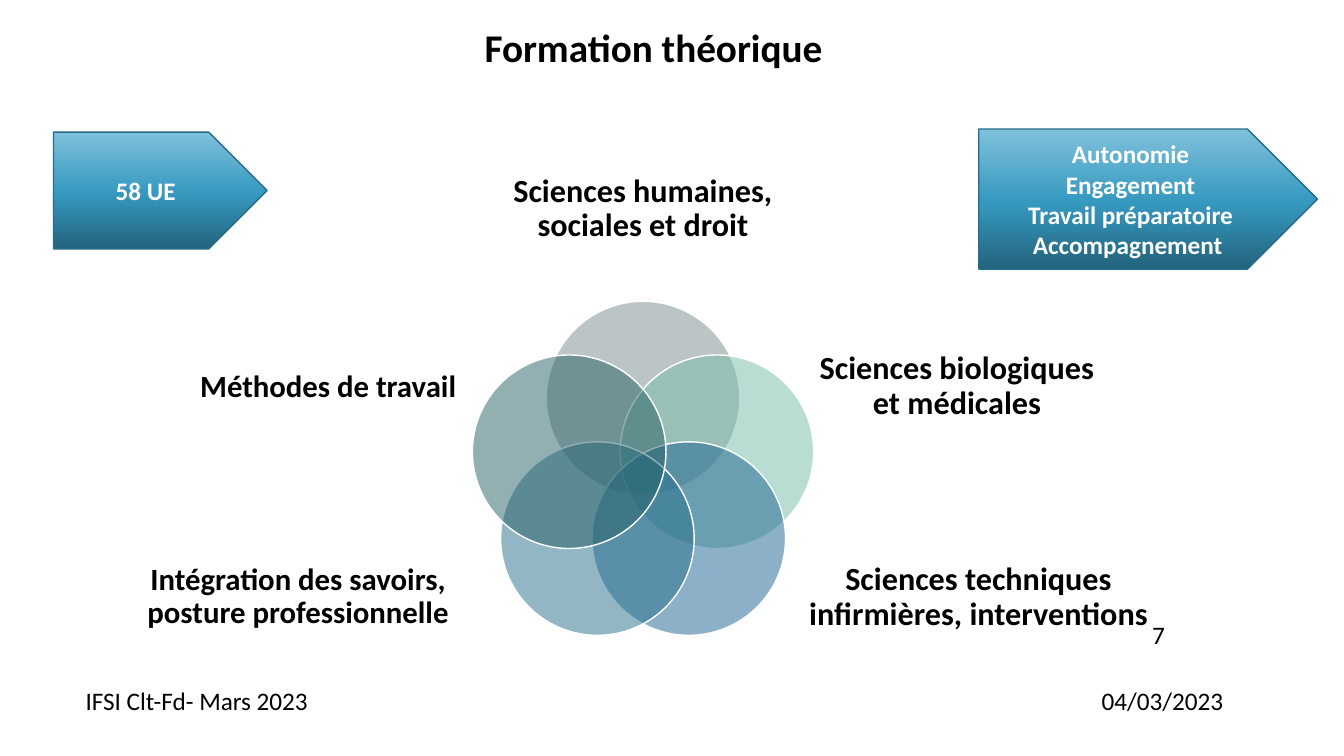
import math
from copy import deepcopy
from lxml import etree
from pptx import Presentation, util as u
from pptx.dml.color import RGBColor
from pptx.enum import shapes, text
from pptx.oxml import ns

COLORS = {
    "ink": "000000", "white": "FFFFFF", "plate_line": "266D8A",
    "grey": "7A8C8E", "green": "75BDA7", "blue": "1D6294",
    "teal": "276F8B", "pine": "266066",
    "deep": "23637D", "mid": "3699C0", "light": "7FC1DB",
}
GRADIENT = [(0, "deep"), (0.48, "mid"), (1, "light")]
FONT = "Calibri"

TITLE = ("Formation théorique", (16.87, 3.07, 63.5, 12.5))
PETALS = [
    ("Sciences humaines, sociales et droit", "grey", 23, (36.98, 20.53, 21.75, 14.27)),
    ("Sciences biologiques et médicales", "green", 23, (60.98, 41.47, 20.48, 19.33)),
    ("Sciences techniques infirmières, interventions", "blue", 23, (58.95, 67.07, 27.75, 23.87)),
    ("Intégration des savoirs, posture professionnelle", "teal", 22, (8.03, 67.33, 28.28, 23.33)),
    ("Méthodes de travail", "pine", 22, (14.85, 41.6, 19.13, 19.33)),
]
PLATES = [
    ("58 UE", (3.98, 17.47, 15.9, 15.47)),
    ("Autonomie\nEngagement\nTravail préparatoire\nAccompagnement ", (72.83, 17.07, 25.2, 18.53)),
]
FOOTERS = [
    ("04/03/2023", (81.23, 90, 13.13, 5.33)),
    ("7", (84.98, 81.33, 9.38, 9.73)),
    ("IFSI Clt-Fd- Mars 2023", (5.63, 90, 61.88, 5.33)),
]
RING_X, RING_Y, RING_R, DIAMETER = 47.85, 62.93, 5.78, 14.4

prs = Presentation()
prs.slide_width, prs.slide_height = u.Inches(13.33), u.Inches(7.5)
W, H = prs.slide_width, prs.slide_height
s = prs.slides.add_slide(prs.slide_layouts[6])


def rgb(name):
    return RGBColor.from_string(COLORS[name])


def place(box):
    return [int(share * side / 100) for share, side in zip(box, (W, H, W, H))]


def write(sp, words, size, color="ink", bold=True, align=text.PP_ALIGN.CENTER,
          anchor=text.MSO_ANCHOR.MIDDLE, spacing=None):
    tf = sp.text_frame
    tf.text = words
    tf.word_wrap = True
    tf.vertical_anchor = anchor
    for p in tf.paragraphs:
        p.alignment = align
        p.line_spacing = spacing
        for r in p.runs:
            r.font.name, r.font.size, r.font.bold = FONT, u.Pt(size), bold
            r.font.color.rgb = rgb(color)
    return tf


def add_shape(kind, place_emu, line):
    sp = s.shapes.add_shape(kind, *place_emu)
    sp.shadow.inherit = False
    sp.line.color.rgb = rgb(line)
    sp.line.width = u.Pt(1)
    return sp


def add_circle(index, color):
    angle = 2 * math.pi * index / len(PETALS)
    d, radius = int(W * DIAMETER / 100), W * RING_R / 100
    x = W * RING_X / 100 + radius * math.sin(angle) - d / 2
    y = H * RING_Y / 100 - radius * math.cos(angle) - d / 2
    sp = add_shape(shapes.MSO_SHAPE.OVAL, (int(x), int(y), d, d), "white")
    sp.fill.solid()
    sp.fill.fore_color.rgb = rgb(color)
    tint = sp._element.spPr.find(ns.qn("a:solidFill"))[0]
    etree.SubElement(tint, ns.qn("a:alpha")).set("val", "50000")


def add_plate(words, box):
    sp = add_shape(shapes.MSO_SHAPE.PENTAGON, place(box), "plate_line")
    sp.fill.gradient()
    sp.fill.gradient_angle = 90
    stops = sp._element.spPr.find(ns.qn("a:gradFill")).find(ns.qn("a:gsLst"))
    stops.append(deepcopy(stops[0]))
    for stop, (position, color) in zip(sp.fill.gradient_stops, GRADIENT):
        stop.position = position
        stop.color.rgb = rgb(color)
    write(sp, words, 18, "white")


title, title_box = TITLE
write(s.shapes.add_textbox(*place(title_box)), title, 28,
      anchor=text.MSO_ANCHOR.TOP, spacing=0.9)

for index, (words, color, size, box) in enumerate(PETALS):
    add_circle(index, color)
    tf = write(s.shapes.add_textbox(*place(box)), words, size, spacing=0.9)
    tf.margin_left = tf.margin_right = tf.margin_top = tf.margin_bottom = 0

for words, box in PLATES:
    add_plate(words, box)

for words, box in FOOTERS:
    write(s.shapes.add_textbox(*place(box)), words, 18, bold=False,
          align=text.PP_ALIGN.LEFT, anchor=text.MSO_ANCHOR.TOP)

prs.save("out.pptx")
